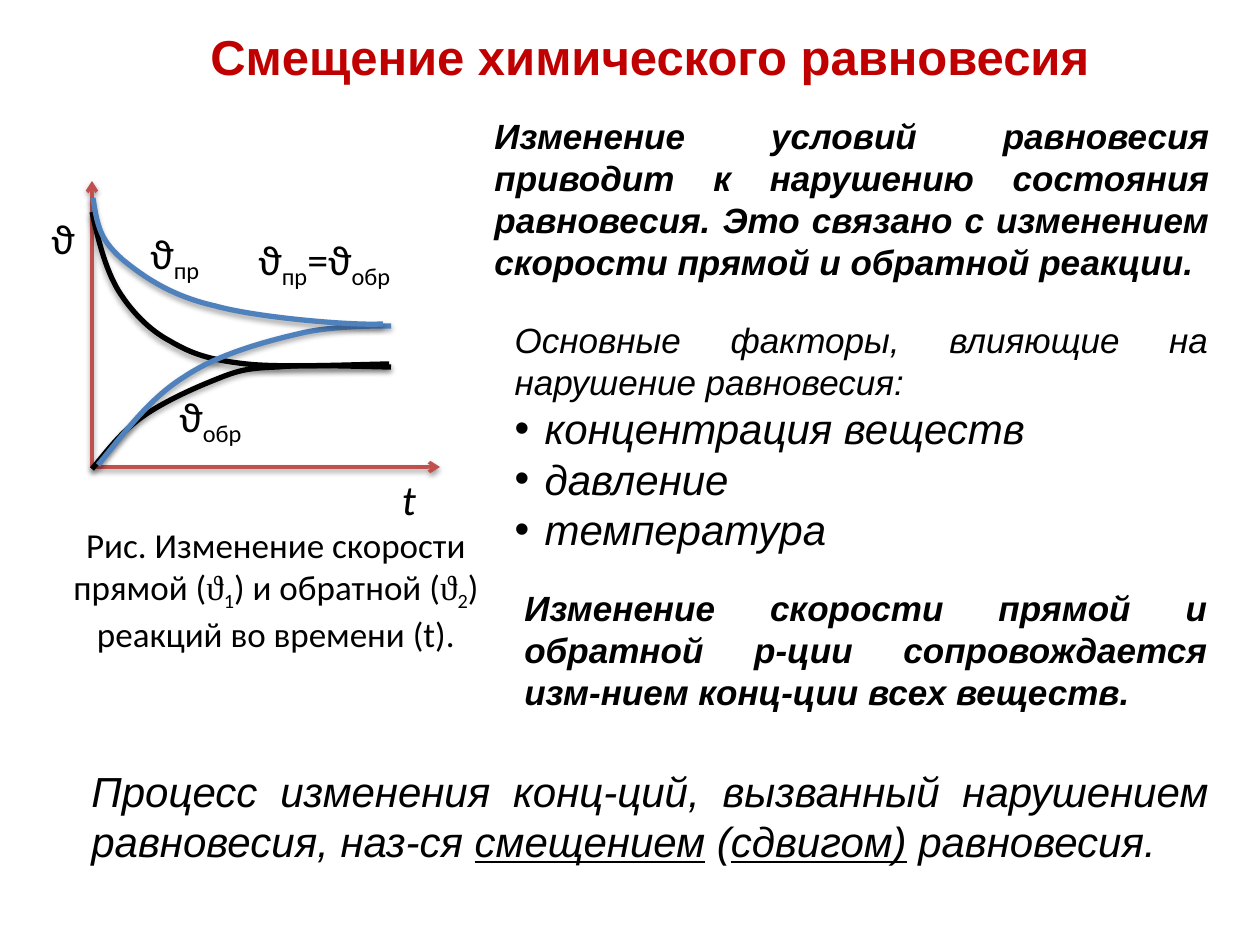
from lxml import etree
from pptx import Presentation, util as u
from pptx.dml.color import RGBColor
from pptx.enum import text as t
from pptx.oxml import parse_xml
from pptx.oxml.ns import nsdecls, qn

SCALE = 914400 / 126
J, C, L = t.PP_ALIGN.JUSTIFY, t.PP_ALIGN.CENTER, t.PP_ALIGN.LEFT
FORWARD = [(53, 31), (59, 58), (66, 87), (79, 109), (92, 130), (110, 149), (131, 160),
           (153, 173), (171, 179), (208, 183), (245, 187), (328, 183), (350, 183)]
REVERSE = [(53, 288), (68, 270), (82, 251), (103, 236), (124, 221), (155, 207), (178, 198),
           (200, 189), (210, 187), (239, 186), (268, 183), (333, 186), (352, 186)]
NEW_REV = [(59, 284), (86, 251), (111, 217), (145, 196), (179, 173), (228, 160), (263, 152),
           (297, 144), (352, 145), (352, 145), (352, 145)]
NEW_FWD = [(54, 17), (59, 51), (64, 61), (84, 79), (105, 96), (132, 115), (176, 125),
           (219, 137), (316, 145), (344, 143), (344, 143)]


def px(n):
    """Turn pixels into EMU."""
    return u.Emu(round(n * SCALE))


def color(code):
    """Turn a hex string into a colour."""
    return RGBColor.from_string(code)


def place(shape, box):
    """Move and size a shape."""
    shape.left, shape.top, shape.width, shape.height = map(px, box)


def style(run, size, font="Arial", tone="000000", bold=False, italic=False):
    """Format one run."""
    f = run.font
    f.size, f.name, f.bold, f.italic = u.Pt(size), font, bold, italic
    f.color.rgb = color(tone)


def write(host, box, parts, size, align=J, after=0, grow=False, **look):
    """Add a text box of (text, mark) parts: _ subscript, u underline, s serif."""
    shape = host.shapes.add_textbox(*map(px, box))
    frame = shape.text_frame
    frame.word_wrap = True
    frame.auto_size = t.MSO_AUTO_SIZE.SHAPE_TO_FIT_TEXT if grow else t.MSO_AUTO_SIZE.NONE
    para = frame.paragraphs[0]
    para.alignment, para.space_after = align, u.Pt(after)
    for words, mark in parts:
        run = para.add_run()
        run.text = words
        style(run, size, **look)
        if mark == "_":
            run.font._element.set("baseline", "-25000")
        elif mark == "u":
            run.font.underline = True
        elif mark == "s":
            run.font.name = "Times New Roman"


def ink(shape, tone, width, alpha, dist):
    """Set the line and soft shadow of a stroke."""
    shape.line.color.rgb = color(tone)
    shape.line.width = u.Pt(width)
    shape._element.spPr.append(parse_xml(
        f'<a:effectLst {nsdecls("a")}><a:outerShdw blurRad="40000" dist="{dist}" dir="5400000" '
        f'rotWithShape="0"><a:srgbClr val="000000"><a:alpha val="{alpha}000"/></a:srgbClr>'
        '</a:outerShdw></a:effectLst>'))


def axis(host, start, end, tip):
    """Draw an axis with an arrow at its headEnd or tailEnd."""
    line = host.shapes.add_connector(1, *map(px, start + end))
    ink(line, "C0504D", 2, 38, 20000)
    etree.SubElement(line.line._get_or_add_ln(), qn(f"a:{tip}"), type="arrow")


def bend(shape):
    """Turn each three straight segments of an outline into one cubic curve."""
    legs = list(shape._element.iter(qn("a:lnTo")))
    for i in range(0, len(legs) - 2, 3):
        cubic = etree.Element(qn("a:cubicBezTo"))
        legs[i].addprevious(cubic)
        for leg in legs[i:i + 3]:
            cubic.append(leg[0])
            leg.getparent().remove(leg)


def curve(host, left, top, pts, tone):
    """Draw a smooth open curve through its control points."""
    first, *rest = [(px(left + x), px(top + y)) for x, y in pts]
    pen = host.shapes.build_freeform(*first)
    pen.add_line_segments(rest, close=False)
    shape = pen.convert_to_shape()
    bend(shape)
    shape.fill.background()
    ink(shape, tone, 3, 35, 23000)


def plot(slide, left, top):
    """Draw the rate plot with its labels and caption."""
    group = slide.shapes.add_group_shape()
    zero = (left + 53, top + 286)
    axis(group, (left + 53, top), zero, "headEnd")
    axis(group, zero, (left + 401, top + 286), "tailEnd")
    for pts in (REVERSE, FORWARD):
        curve(group, left, top, pts, "000000")
    fwd, rev = [("ϑ", ""), ("пр", "_")], [("ϑ", ""), ("обр", "_")]
    labels = [
        ((0, 25, 62, 62), [("ϑ", "")], 24, L, False),
        ((99, 40, 98, 62), fwd, 24, L, False),
        ((128, 203, 118, 79), rev, 24, L, False),
        ((207, 46, 217, 79), fwd + [("=ϑ", ""), ("обр", "_")], 24, J, False),
        ((339, 286, 62, 49), [("t", "")], 24, C, True),
        ((11, 336, 452, 163), [
            ("Рис. Изменение скорости прямой (", ""), ("ϑ", "s"), ("1", "_"),
            (") и обратной (", ""), ("ϑ", "s"), ("2", "_"),
            (") реакций во времени (t).", "")], 20, C, False)]
    for (x, y, w, h), parts, size, align, slant in labels:
        write(group, (left + x, top + y, w, h), parts, size, align, 10,
              font="Calibri", italic=slant)
    for pts in (NEW_REV, NEW_FWD):
        curve(slide, left, top, pts, "4F81BD")


def head(slide, box):
    """Fill the title."""
    shape = slide.shapes.title
    place(shape, box)
    frame = shape.text_frame
    frame.text = "Смещение химического равновесия "
    frame.vertical_anchor = t.MSO_ANCHOR.MIDDLE
    frame.auto_size = t.MSO_AUTO_SIZE.SHAPE_TO_FIT_TEXT
    para = frame.paragraphs[0]
    para.alignment = C
    para._p.get_or_add_pPr().set("indent", str(px(62)))
    style(para.runs[0], 28, tone="C00000", bold=True)


def factors(slide, box):
    """Fill the body with the list of factors."""
    shape = slide.placeholders[1]
    place(shape, box)
    frame = shape.text_frame
    frame.text = ("Основные факторы, влияющие на нарушение равновесия:\n"
                  "концентрация веществ\nдавление\nтемпература")
    frame.vertical_anchor = t.MSO_ANCHOR.MIDDLE
    frame.auto_size = t.MSO_AUTO_SIZE.SHAPE_TO_FIT_TEXT
    for i, para in enumerate(frame.paragraphs):
        para.alignment, para.space_before = J, u.Pt(0)
        gap = px(30) if i else 0
        prop = para._p.get_or_add_pPr()
        prop.set("marL", str(gap))
        prop.set("indent", str(-gap))
        if i:
            etree.SubElement(prop, qn("a:buFont"), typeface="Arial")
            etree.SubElement(prop, qn("a:buChar"), char="•")
        else:
            etree.SubElement(prop, qn("a:buNone"))
        style(para.runs[0], 24 if i else 20, italic=True)


def main():
    """Build and save the slide."""
    deck = Presentation()
    deck.slide_width, deck.slide_height = px(1260), px(945)
    slide = deck.slides.add_slide(deck.slide_layouts[1])
    head(slide, (69, 20, 1113, 72))
    factors(slide, (502, 311, 719, 251))
    write(slide, (79, 759, 1142, 115), [
        ("Процесс изменения конц-ций, вызванный нарушением равновесия, наз-ся ", ""),
        ("смещением", "u"), (" (", ""), ("сдвигом)", "u"), (" равновесия. ", "")],
        24, grow=True, italic=True)
    write(slide, (482, 108, 740, 183), [
        ("Изменение условий равновесия приводит к нарушению состояния равновесия. "
         "Это связано с изменением скорости прямой и обратной реакции.", "")],
        20, grow=True, bold=True, italic=True)
    plot(slide, 39, 181)
    write(slide, (512, 580, 708, 140), [
        ("Изменение скорости прямой и обратной р-ции сопровождается "
         "изм-нием конц-ции всех веществ.", "")],
        20, grow=True, bold=True, italic=True)
    deck.save("out.pptx")


if __name__ == "__main__":
    main()
